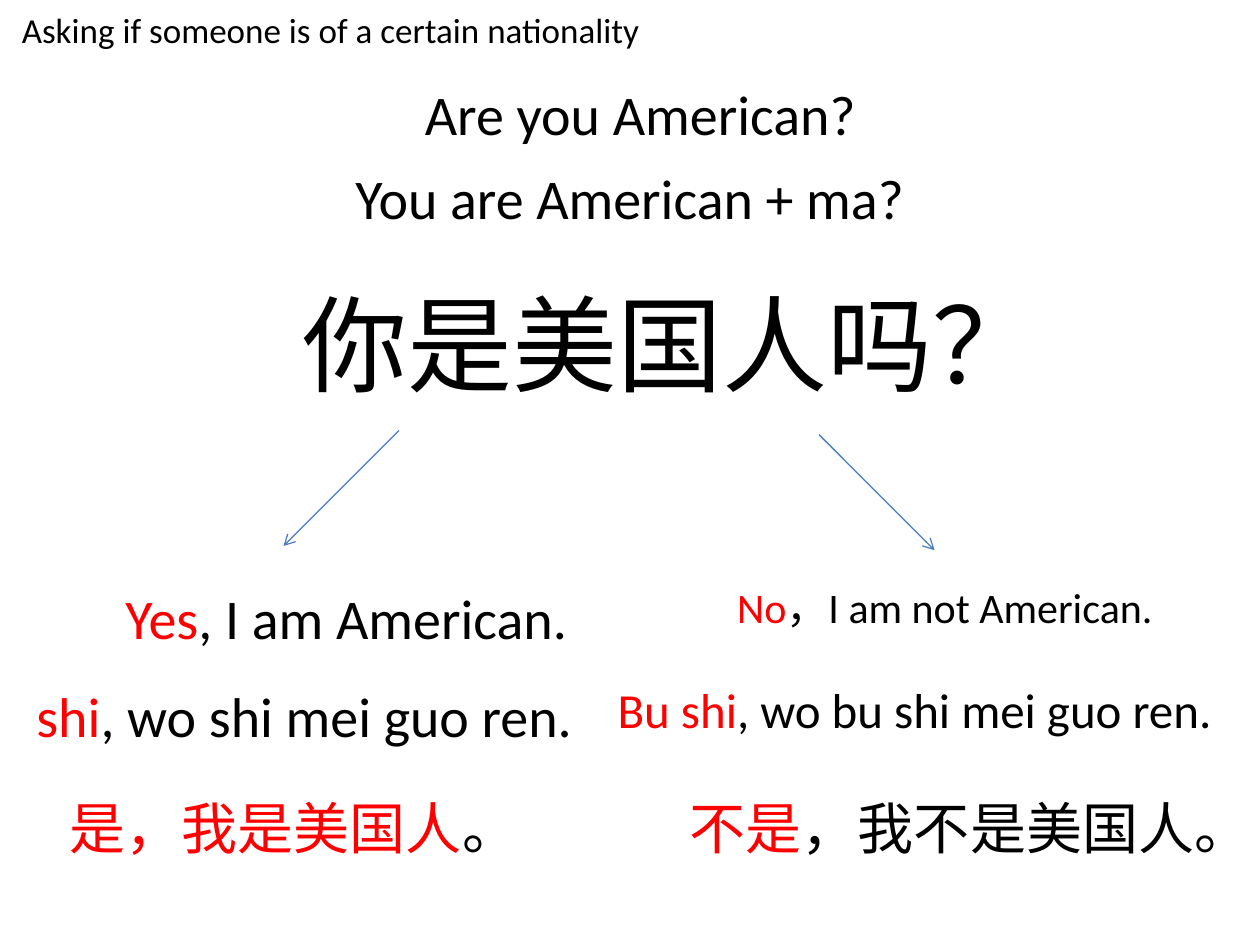
from dataclasses import dataclass

from lxml.etree import SubElement
from pptx import Presentation
from pptx.dml.color import RGBColor
from pptx.enum.shapes import MSO_CONNECTOR
from pptx.enum.text import MSO_ANCHOR, PP_ALIGN
from pptx.oxml.ns import qn
from pptx.slide import Slide
from pptx.util import Inches, Pt

COLORS = {"text": "000000", "answer": "FF0000", "arrow": "4B7EBC"}


@dataclass
class LessonSlide:
    """Draws lesson elements on a slide grid of 12 columns and 12 rows per inch."""

    slide: Slide
    font: str = "Calibri"
    cells_per_inch: int = 12
    line_rows: int = 9

    def lengths(self, *cells):
        return [Inches(cell / self.cells_per_inch) for cell in cells]

    def text(self, left, top, width, size, plain, answer="", rows=None, anchor=MSO_ANCHOR.TOP):
        bounds = self.lengths(left, top, width, rows or self.line_rows)
        frame = self.slide.shapes.add_textbox(*bounds).text_frame
        frame.word_wrap = True
        frame.vertical_anchor = anchor
        paragraph = frame.paragraphs[0]
        paragraph.alignment = PP_ALIGN.CENTER
        paragraph.font.name = self.font
        paragraph.font.size = Pt(size)
        for words, color in ((answer, "answer"), (plain, "text")):
            if words:
                run = paragraph.add_run()
                run.text = words
                run.font.color.rgb = RGBColor.from_string(COLORS[color])

    def arrow(self, start_column, start_row, end_column, end_row):
        ends = self.lengths(start_column, start_row, end_column, end_row)
        connector = self.slide.shapes.add_connector(MSO_CONNECTOR.STRAIGHT, *ends)
        connector.line.color.rgb = RGBColor.from_string(COLORS["arrow"])
        connector.line.width = Pt(0.75)
        SubElement(connector.line._get_or_add_ln(), qn("a:tailEnd"), type="arrow")
        SubElement(connector._element.spPr, qn("a:effectLst"))


def main():
    presentation = Presentation()
    presentation.slide_width = Inches(10)
    presentation.slide_height = Inches(7.5)
    lesson = LessonSlide(presentation.slides.add_slide(presentation.slide_layouts[6]))

    lesson.text(-2, -0.2, 67, 20, "Asking if someone is of a certain nationality",
                rows=6, anchor=MSO_ANCHOR.MIDDLE)
    lesson.text(19, 7, 84, 32, "Are you American?")
    lesson.text(18, 15, 84, 32, "You are American + ma?")
    lesson.text(21.8, 26, 84, 60, "你是美国人吗？")

    lesson.arrow(38, 41, 27, 52)
    lesson.text(6, 55, 54, 32, ", I am American.", "Yes")
    lesson.text(2, 64.3, 54, 32, ", wo shi mei guo ren.", "shi")
    lesson.text(0, 75, 56, 32, "。", "是，我是美国人")

    lesson.arrow(78, 41.4, 89, 52.4)
    lesson.text(60, 54.8, 60, 24, "，I am not American.", "No")
    lesson.text(54.2, 64.1, 65.8, 28, ", wo bu shi mei guo ren.", "Bu shi")
    lesson.text(60, 75, 64.8, 32, "，我不是美国人。", "不是")

    presentation.save("out.pptx")


if __name__ == "__main__":
    main()
